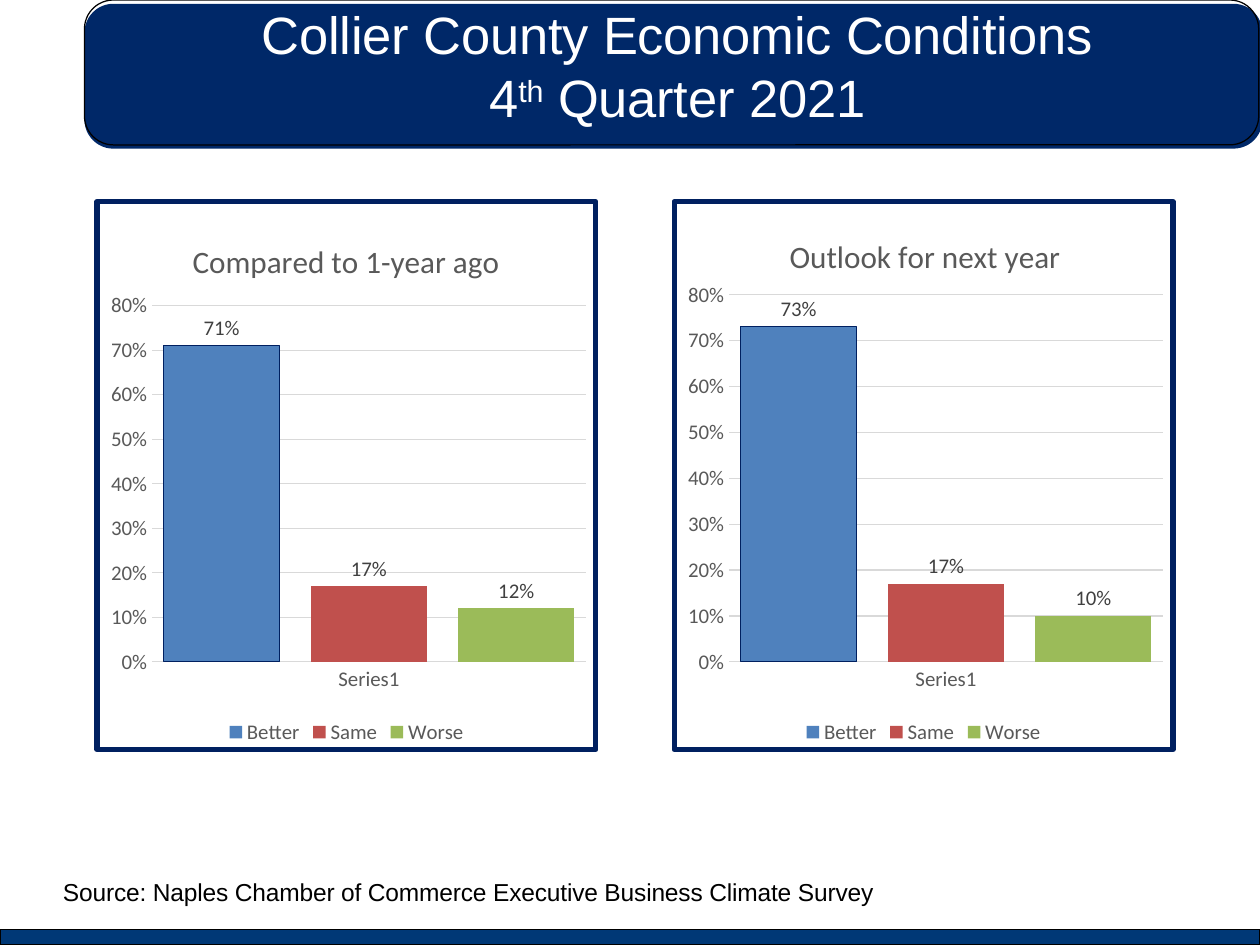
from lxml import etree
from pptx import Presentation
from pptx.chart.data import CategoryChartData
from pptx.dml.color import RGBColor
from pptx.enum.chart import XL_CHART_TYPE, XL_LABEL_POSITION, XL_LEGEND_POSITION, XL_TICK_MARK
from pptx.enum.shapes import MSO_SHAPE
from pptx.enum.text import MSO_ANCHOR, PP_ALIGN
from pptx.oxml import parse_xml
from pptx.util import Inches, Pt

COLUMN = XL_CHART_TYPE.COLUMN_CLUSTERED
OUTSIDE = XL_LABEL_POSITION.OUTSIDE_END
BOTTOM = XL_LEGEND_POSITION.BOTTOM
NO_TICK = XL_TICK_MARK.NONE
ROUNDED, RECTANGLE = MSO_SHAPE.ROUNDED_RECTANGLE, MSO_SHAPE.RECTANGLE
TOP, CENTER, LEFT = MSO_ANCHOR.TOP, PP_ALIGN.CENTER, PP_ALIGN.LEFT
C_NS = "http://schemas.openxmlformats.org/drawingml/2006/chart"
A_NS = "http://schemas.openxmlformats.org/drawingml/2006/main"

HEX = {
    "banner": "002868", "footer": "003876", "frame": "002060", "black": "000000",
    "white": "FFFFFF", "grid": "D9D9D9", "axis": "595959", "label": "404040",
    "Better": "4F81BD", "Same": "C0504D", "Worse": "9BBB59",
}
COLOR = {part: RGBColor.from_string(value) for part, value in HEX.items()}

prs = Presentation()
prs.slide_width, prs.slide_height = Inches(10), Inches(7.5)
slide = prs.slides.add_slide(prs.slide_layouts[6])


def style_font(font, size, color, face="Calibri"):
    font.size, font.name, font.bold = Pt(size), face, False
    font.color.rgb = COLOR[color]


def set_layout(parent, position, **shares):
    layout = parent.find(f"{{{C_NS}}}layout")
    if layout is None:
        layout = etree.Element(f"{{{C_NS}}}layout")
        parent.insert(position, layout)
    for child in list(layout):
        layout.remove(child)
    manual = etree.SubElement(layout, f"{{{C_NS}}}manualLayout")
    if "w" in shares:
        etree.SubElement(manual, f"{{{C_NS}}}layoutTarget", val="inner")
    for mode in ("xMode", "yMode"):
        etree.SubElement(manual, f"{{{C_NS}}}{mode}", val="edge")
    for key, share in shares.items():
        etree.SubElement(manual, f"{{{C_NS}}}{key}", val=str(share))


bands = [
    (ROUNDED, 0.67, 0.03, 9.35, 1.15, "banner", None),
    (ROUNDED, 0.67, 0, 9.32, 1.15, None, "black"),
    (RECTANGLE, 0, 7.38, 10, 0.12, "footer", "black"),
]
for outline, left, top, width, height, fill, line in bands:
    band = slide.shapes.add_shape(outline, *map(Inches, (left, top, width, height)))
    band.shadow.inherit = False
    if outline == ROUNDED:
        band.adjustments[0] = 0.2
    if fill:
        band.fill.solid()
        band.fill.fore_color.rgb = COLOR[fill]
    else:
        band.fill.background()
    if line:
        band.line.color.rgb = COLOR[line]
        band.line.width = Pt(0.72)
    else:
        band.line.fill.background()

texts = [
    (0.75, 0.01, 9.25, 1.02, CENTER, 30, "white",
     ["Collier County Economic Conditions", "\n", "4", "th", " Quarter 2021"]),
    (0.5, 6.95, 6.7, 0.25, LEFT, 14, "black",
     ["Source: Naples Chamber of Commerce Executive Business Climate Survey"]),
]
for left, top, width, height, align, size, color, pieces in texts:
    frame = slide.shapes.add_textbox(*map(Inches, (left, top, width, height))).text_frame
    frame.word_wrap, frame.vertical_anchor = True, TOP
    frame.margin_left = frame.margin_right = frame.margin_bottom = 0
    frame.margin_top = Inches(0.01)
    paragraph = frame.paragraphs[0]
    paragraph.alignment, paragraph.space_before = align, Pt(1)
    for piece in pieces:
        if piece == "\n":
            paragraph.add_line_break()
            continue
        run = paragraph.add_run()
        run.text = piece
        style_font(run.font, size, color, "Arial")
        run.font._element.set("spc", "-10")
        if piece == "th":
            run.font._element.set("baseline", "30000")

answers = ("Better", "Same", "Worse")
surveys = [
    ("Compared to 1-year ago", 0.75, (0.71, 0.17, 0.12), (0.18, 0.06), 0.19),
    ("Outlook for next year", 5.33, (0.73, 0.17, 0.10), (0.22, 0.05), 0.17),
]
for heading, left, shares, (title_x, title_y), plot_top in surveys:
    data = CategoryChartData(number_format="0%")
    data.categories = ["Series1"]
    for answer, share in zip(answers, shares):
        data.add_series(answer, [share])
    chart = slide.shapes.add_chart(
        COLUMN, *map(Inches, (left, 1.58, 4, 4.39)), data).chart
    style_font(chart.font, 10, "black")

    chart.has_title = True
    title = chart.chart_title
    title.include_in_layout = False
    run = title.text_frame.paragraphs[0].add_run()
    run.text = heading
    style_font(run.font, 18, "axis")
    set_layout(title._element, 1, x=title_x, y=title_y)

    chart.has_legend = True
    chart.legend.position = BOTTOM
    chart.legend.include_in_layout = False
    style_font(chart.legend.font, 12, "axis")

    for axis in (chart.category_axis, chart.value_axis):
        axis.major_tick_mark = axis.minor_tick_mark = NO_TICK
        style_font(axis.tick_labels.font, 12, "axis")
    baseline = chart.category_axis.format.line
    values = chart.value_axis
    values.minimum_scale, values.maximum_scale, values.major_unit = 0, 0.8, 0.1
    values.tick_labels.number_format = "0%"
    values.tick_labels.number_format_is_linked = False
    values.format.line.fill.background()
    for line in (baseline, values.major_gridlines.format.line):
        line.color.rgb = COLOR["grid"]
        line.width = Pt(0.75)

    plot = chart.plots[0]
    plot.gap_width, plot.overlap, plot.vary_by_categories = 20, -27, False
    for series in plot.series:
        series.format.fill.solid()
        series.format.fill.fore_color.rgb = COLOR[series.name]
        labels = series.data_labels
        labels.show_value, labels.position = True, OUTSIDE
        labels.number_format, labels.number_format_is_linked = "0%", False
        style_font(labels.font, 12, "label")
    better = plot.series[0].points[0].format
    better.fill.solid()
    better.fill.fore_color.rgb = COLOR["Better"]
    better.line.color.rgb = COLOR["frame"]
    better.line.width = Pt(0.75)

    chart_root = chart._chartSpace
    set_layout(chart_root.chart.plotArea, 0,
               x=0.11, y=plot_top, w=0.87, h=round(0.84 - plot_top, 2))
    chart_root.chart.addnext(parse_xml(
        f'<c:spPr xmlns:c="{C_NS}" xmlns:a="{A_NS}">'
        f'<a:solidFill><a:srgbClr val="{HEX["white"]}"/></a:solidFill>'
        f'<a:ln w="{Pt(3)}"><a:solidFill><a:srgbClr val="{HEX["frame"]}"/></a:solidFill></a:ln>'
        '</c:spPr>'))

prs.save("out.pptx")
